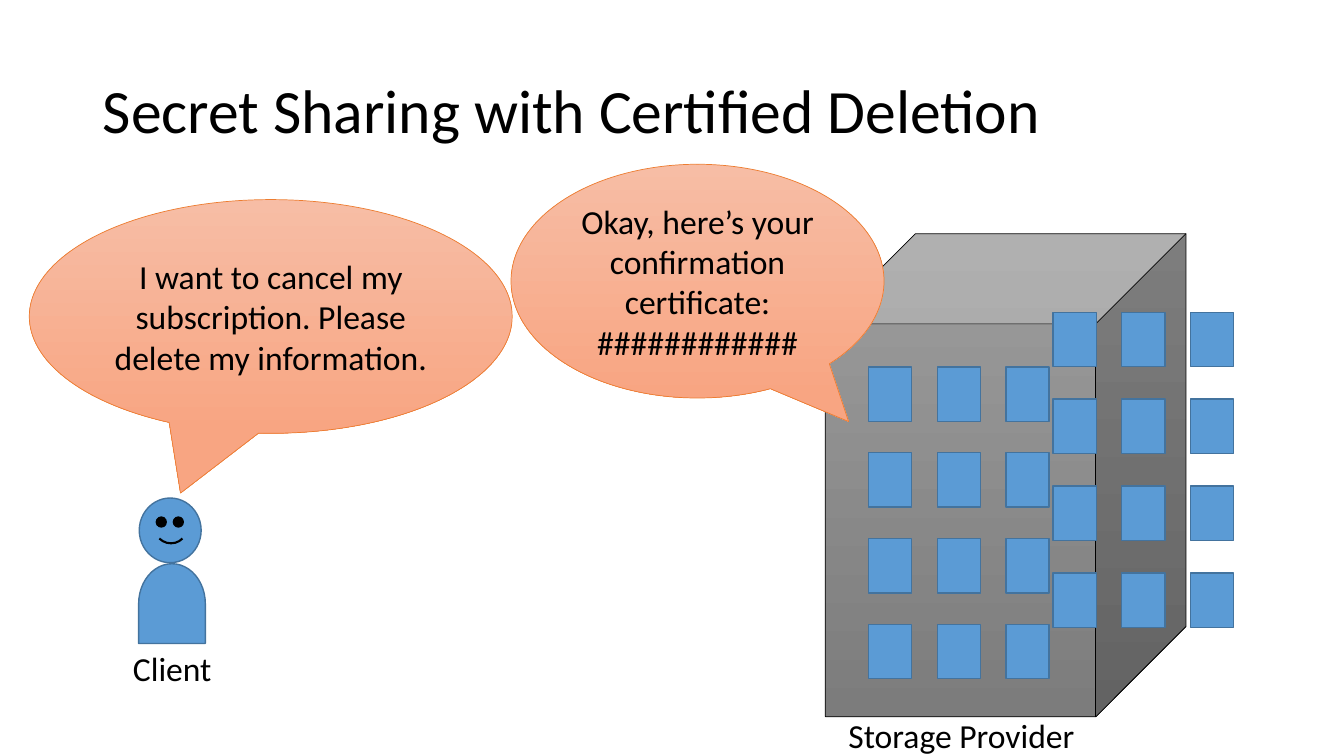
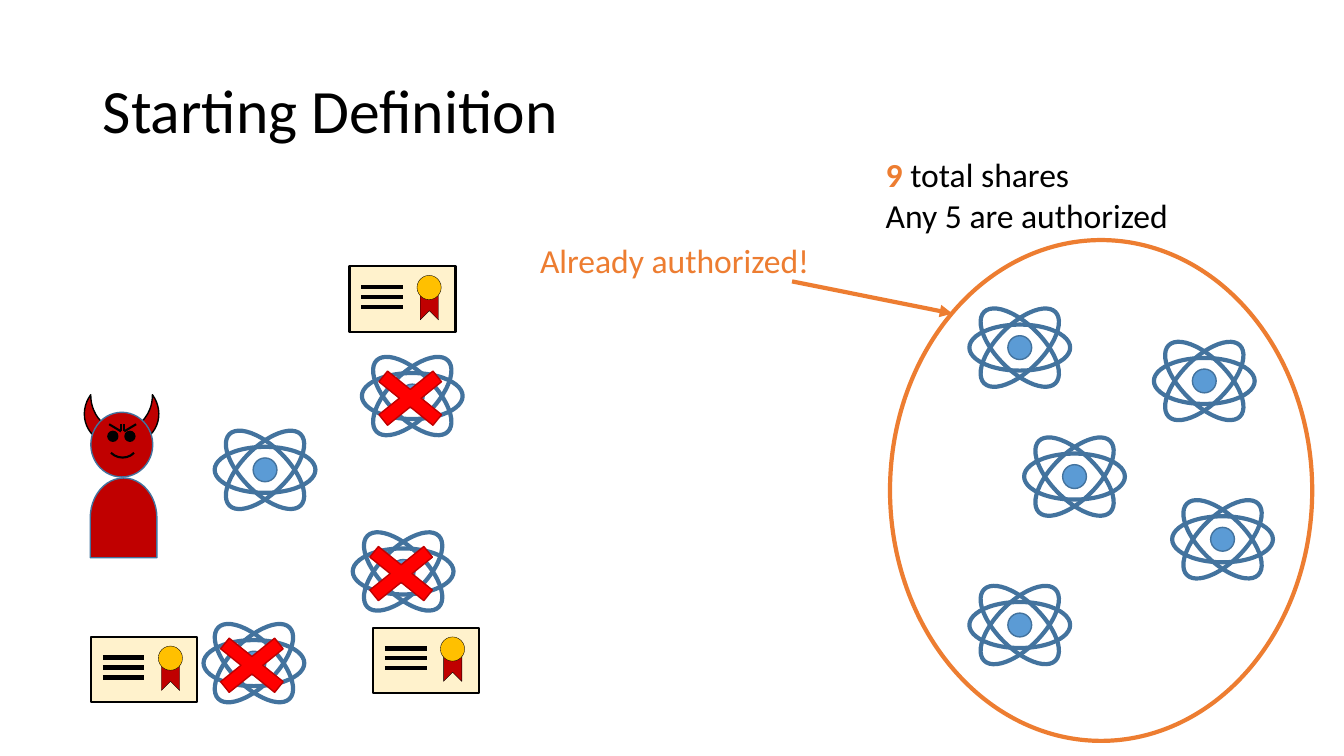
"""Build two slides on secret sharing with certified deletion."""
from pptx import Presentation
from pptx.dml.color import RGBColor
from pptx.enum.shapes import MSO_CONNECTOR, MSO_SHAPE
from pptx.enum.text import MSO_ANCHOR, PP_ALIGN
from pptx.oxml.ns import qn
from pptx.util import Cm, Pt
from lxml import etree

ARC, CHEVRON, CUBE = MSO_SHAPE.ARC, MSO_SHAPE.CHEVRON, MSO_SHAPE.CUBE
DELAY, ELLIPSE, MOON = MSO_SHAPE.FLOWCHART_DELAY, MSO_SHAPE.OVAL, MSO_SHAPE.MOON
CALLOUT, CROSS, RECT = MSO_SHAPE.OVAL_CALLOUT, MSO_SHAPE.MATH_MULTIPLY, MSO_SHAPE.RECTANGLE
STRAIGHT = MSO_CONNECTOR.STRAIGHT
TOP, MIDDLE = MSO_ANCHOR.TOP, MSO_ANCHOR.MIDDLE
LEFT, CENTER = PP_ALIGN.LEFT, PP_ALIGN.CENTER

FONT = "Calibri"
BLACK = RGBColor(0x00, 0x00, 0x00)
BLUE = RGBColor(0x5B, 0x9B, 0xD5)
DARK_BLUE = RGBColor(0x43, 0x73, 0x9E)
ORANGE = RGBColor(0xED, 0x7D, 0x31)
RED = RGBColor(0xFF, 0x00, 0x00)
DARK_RED = RGBColor(0xC0, 0x00, 0x00)
CREAM = RGBColor(0xFF, 0xF2, 0xCC)
GOLD = RGBColor(0xFF, 0xC0, 0x00)
PEACH = (RGBColor(0xF7, 0xBD, 0xA5), RGBColor(0xF8, 0xA5, 0x82))
GREY = (RGBColor(0x9D, 0x9D, 0x9D), RGBColor(0x7C, 0x7C, 0x7C))


def style_span(span, size=24, color=BLACK, bold=False):
    """Set the font of one run."""
    span.font.name, span.font.size = FONT, Pt(size)
    span.font.bold, span.font.color.rgb = bold, color


def write(frame, text, size=24, color=BLACK, align=LEFT, anchor=TOP):
    """Fill a text frame and format all its runs."""
    frame.text = text
    frame.vertical_anchor = anchor
    for para in frame.paragraphs:
        para.alignment = align
        for span in para.runs:
            style_span(span, size, color)


def add_text(page, place, text, wrap=False, **style):
    """Add a text box and return its frame."""
    frame = page.shapes.add_textbox(*map(Cm, place)).text_frame
    frame.word_wrap = wrap
    write(frame, text, **style)
    return frame


def add_title(page, text):
    """Add the slide title."""
    frame = add_text(page, (2.34, 1.02, 29.21, 3.68), text, True, size=44, anchor=MIDDLE)
    frame.paragraphs[0].line_spacing = 0.9


def draw(shapes, kind, place, fill=None, line=DARK_BLUE, weight=1, turn=0, adjust=()):
    """Add a preset shape; a pair of colours gives a vertical gradient."""
    shape = shapes.add_shape(kind, *map(Cm, place))
    shape.shadow.inherit = False
    shape.rotation = turn
    if fill is None:
        shape.fill.background()
    elif fill in (PEACH, GREY):
        shape.fill.gradient()
        shape.fill.gradient_angle = 270
        for stop, color in zip(shape.fill.gradient_stops, fill):
            stop.color.rgb = color
    else:
        shape.fill.solid()
        shape.fill.fore_color.rgb = fill
    shape.line.color.rgb, shape.line.width = line, Pt(weight)
    for index, value in enumerate(adjust):
        shape.adjustments[index] = value
    return shape


def draw_line(shapes, ends, color=BLACK, weight=3, arrow=False):
    """Add a straight line, with an arrowhead if wanted."""
    line = shapes.add_connector(STRAIGHT, *map(Cm, ends))
    line.line.color.rgb, line.line.width = color, Pt(weight)
    properties = line._element.spPr
    if arrow:
        etree.SubElement(properties.find(qn("a:ln")), qn("a:tailEnd"), type="triangle")
    etree.SubElement(properties, qn("a:effectLst"))


def add_person(page, x, y, color, devil=False):
    """Draw a figure whose head starts at x, y."""
    shapes = page.shapes.add_group_shape().shapes
    if devil:
        draw(shapes, MOON, (x - 0.03, y - 0.43, 0.79, 1.5), color, BLACK, turn=306.6)
        horn = draw(shapes, MOON, (x + 0.79, y - 0.43, 0.79, 1.5), color, BLACK, turn=53.4)
        horn._element.spPr.xfrm.set("flipH", "1")
    draw(shapes, DELAY, (x - 0.18, y + 1.82, 2.01, 1.68), color, turn=270)
    draw(shapes, ELLIPSE, (x, y, 1.56, 1.63), color)
    for eye in (0.43, 0.86):
        draw(shapes, ELLIPSE, (x + eye, y + 0.48, 0.25, 0.25), BLACK, BLACK)
    draw(shapes, ARC, (x + 0.38, y + 0.31, 0.81, 0.84), None, BLACK, 1.5, 133.9)
    if devil:
        for inner, outer in ((0.76, 0.46), (0.84, 1.14)):
            for end in (inner, outer):
                draw_line(shapes, (x + inner, y + 0.48, x + end, y + 0.3), weight=1.5)


def add_callout(page, place, tail, text):
    """Add a speech bubble."""
    bubble = draw(page.shapes, CALLOUT, place, PEACH, ORANGE, 0.5, adjust=tail)
    bubble.text_frame.word_wrap = True
    write(bubble.text_frame, text, align=CENTER, anchor=MIDDLE)


def add_building(page):
    """Draw the provider's building with two walls of windows."""
    shapes = page.shapes.add_group_shape().shapes
    draw(shapes, CUBE, (20.8, 5.89, 9.09, 12.17), GREY, BLACK, 0.5)
    for left, top, pitch in ((21.89, 9.25, 2.16), (26.54, 7.87, 2.19)):
        for row in range(4):
            for column in range(3):
                place = (left + column * 1.73, top + row * pitch, 1.09, 1.37)
                draw(shapes, RECT, place, BLUE)


def add_share(page, x, y, deleted=False):
    """Draw an atom centred on x, y, crossed out if deleted."""
    shapes = page.shapes.add_group_shape().shapes
    for turn in (45, 315, 0):
        draw(shapes, ELLIPSE, (x - 1.27, y - 0.58, 2.54, 1.16), weight=3, turn=turn)
    draw(shapes, ELLIPSE, (x - 0.3, y - 0.3, 0.6, 0.6), BLUE)
    if deleted:
        place = (x - 1.36, y - 1, 2.62, 2.11)
        draw(page.shapes, CROSS, place, RED, DARK_RED, adjust=(0.163,))


def add_certificate(page, x, y):
    """Draw a deletion certificate with its ribbon and seal."""
    shapes = page.shapes.add_group_shape().shapes
    draw(shapes, RECT, (x, y, 2.67, 1.65), CREAM, BLACK, 1.5)
    for row in range(3):
        height = y + 0.52 + row * 0.25
        draw_line(shapes, (x + 0.3, height, x + 1.35, height))
    draw(shapes, CHEVRON, (x + 1.5, y + 0.61, 1.02, 0.46), DARK_RED, BLACK, 0.25, 270)
    draw(shapes, ELLIPSE, (x + 1.7, y + 0.23, 0.61, 0.61), GOLD, BLACK, 0.25)


def build_deletion(page):
    """Build the dialogue between client and provider."""
    add_title(page, "Secret Sharing with Certified Deletion")
    add_person(page, 3.51, 12.55, BLUE)
    add_callout(page, (0.74, 5.03, 12.17, 5.89), (-0.187, 0.756),
                "I want to cancel my subscription. Please delete my information.")
    add_building(page)
    add_callout(page, (12.88, 4.14, 9.4, 5.89), (0.405, 0.601),
                "Okay, here’s your confirmation certificate:\n############")
    add_text(page, (21.13, 17.88, 6.27, 1.27), "Storage Provider")
    add_text(page, (3.1, 16.21, 2.51, 1.27), "Client")


def build_definition(page):
    """Build the adversary's view of the shares."""
    add_title(page, "Starting Definition")
    add_person(page, 2.29, 10.39, DARK_RED, devil=True)
    for x, y in ((10.39, 9.98), (10.16, 14.4), (6.4, 16.71)):
        add_share(page, x, y, deleted=True)
    for x, y in ((6.68, 11.84), (25.7, 8.76), (30.35, 9.6),
                 (27.08, 12.01), (30.81, 13.59), (25.7, 15.75)):
        add_share(page, x, y)
    for x, y in ((8.81, 6.71), (9.4, 15.82), (2.29, 16.05)):
        add_certificate(page, x, y)
    count = add_text(page, (22.07, 3.76, 7.7, 2.31), "9\nAny 5 are authorized").paragraphs[0]
    style_span(count.runs[0], color=ORANGE, bold=True)
    rest = count.add_run()
    rest.text = " total shares"
    style_span(rest)
    draw(page.shapes, ELLIPSE, (22.43, 6.05, 10.64, 12.62), line=ORANGE, weight=3)
    draw_line(page.shapes, (19.96, 7.09, 24, 7.9), ORANGE, arrow=True)
    add_text(page, (13.36, 5.92, 7.54, 1.27), "Already authorized!", color=ORANGE)


def main():
    """Create and save the deck."""
    deck = Presentation()
    deck.slide_width, deck.slide_height = Cm(33.87), Cm(19.05)
    for build in (build_deletion, build_definition):
        build(deck.slides.add_slide(deck.slide_layouts[6]))
    deck.save("out.pptx")


if __name__ == "__main__":
    main()
